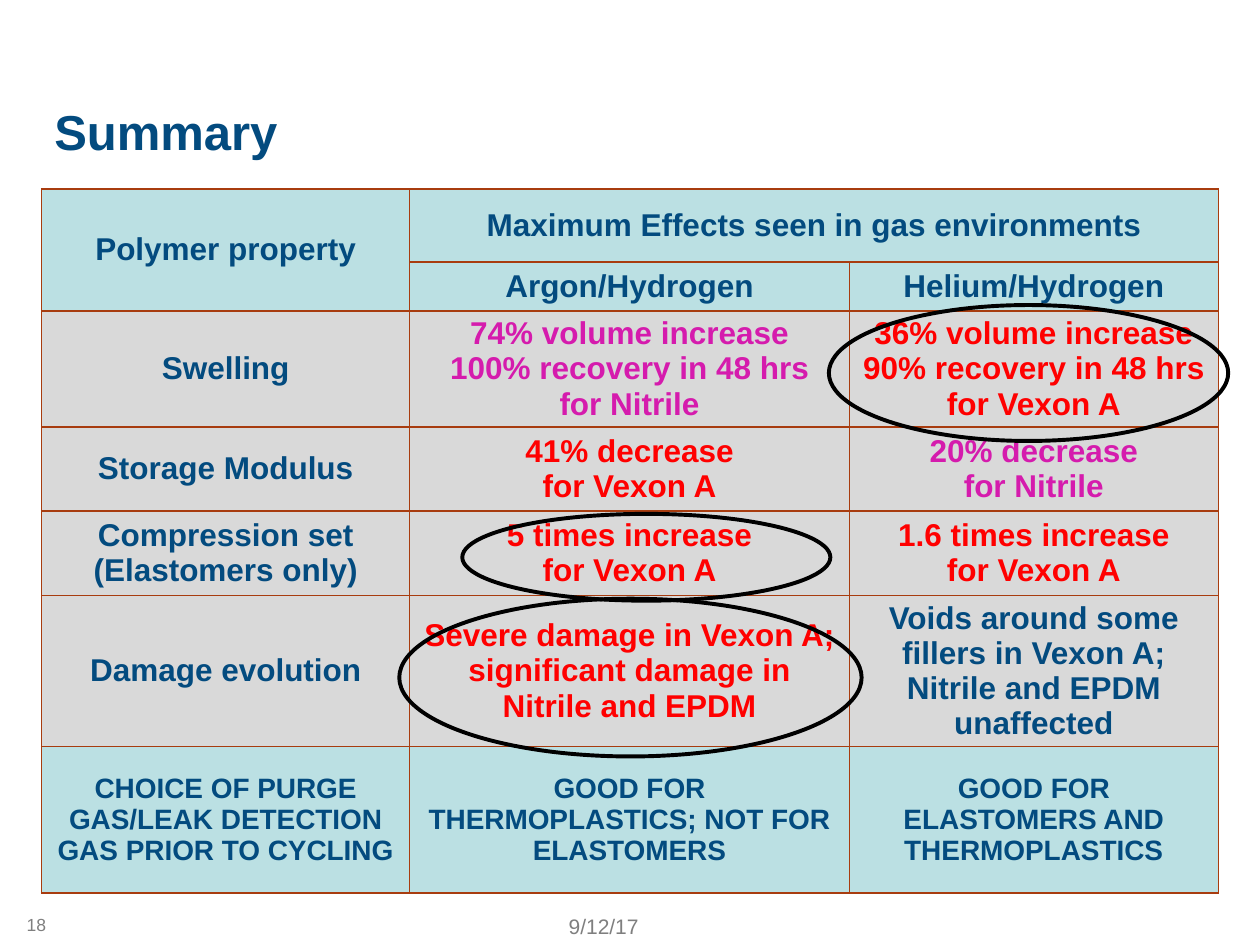
from dataclasses import dataclass

from lxml import etree
from pptx import Presentation
from pptx import util as u
from pptx.dml.color import RGBColor
from pptx.enum import shapes, text
from pptx.oxml import ns


@dataclass(frozen=True)
class Theme:
    font: str = "Arial"
    navy: str = "034B7F"
    magenta: str = "D51BAD"
    red: str = "FF0000"
    black: str = "000000"
    grey: str = "7F7F7F"
    header_fill: str = "BBE0E3"
    body_fill: str = "D9D9D9"
    border: str = "A83C0F"
    title_size: int = 28
    cell_size: int = 18
    verdict_size: int = 16
    date_size: int = 12
    number_size: int = 10


THEME = Theme()

# Each cell is (wording, colour); "\n" starts a paragraph, "\v" breaks a line.
HEADER = [
    [("Polymer property", THEME.navy),
     ("Maximum Effects seen in gas environments", THEME.navy), ("", THEME.navy)],
    [("", THEME.navy), ("Argon/Hydrogen", THEME.navy), ("Helium/Hydrogen", THEME.navy)],
]
FINDINGS = [
    [("Swelling", THEME.navy),
     ("74% volume increase\n100% recovery in 48 hrs\nfor Nitrile", THEME.magenta),
     ("36% volume increase 90% recovery in 48 hrs\nfor Vexon A", THEME.red)],
    [("Storage Modulus", THEME.navy),
     ("41% decrease\nfor Vexon A", THEME.red),
     ("20% decrease\nfor Nitrile", THEME.magenta)],
    [("Compression set\v(Elastomers only)", THEME.navy),
     ("5 times increase\vfor Vexon A", THEME.red),
     ("1.6 times increase\nfor Vexon A", THEME.red)],
    [("Damage evolution", THEME.navy),
     ("Severe damage in Vexon A; significant damage in\vNitrile and EPDM", THEME.red),
     ("Voids around some fillers in Vexon A;\nNitrile and EPDM unaffected", THEME.navy)],
]
VERDICT = [
    ("CHOICE OF PURGE GAS/LEAK DETECTION GAS PRIOR TO CYCLING", THEME.navy),
    ("GOOD FOR THERMOPLASTICS; NOT FOR ELASTOMERS", THEME.navy),
    ("GOOD FOR ELASTOMERS AND THERMOPLASTICS", THEME.navy),
]
COLUMN_WIDTHS = [7.42, 8.86, 7.44]
ROW_HEIGHTS = [1.47, 0.99, 2.13, 1.7, 1.7, 2.62, 2.95]
HIGHLIGHTS = [
    (16.71, 6.15, 8.05, 2.74),
    (8.05, 12.07, 9.32, 3.18),
    (9.32, 10.36, 7.42, 1.75),
]


class SlideBuilder:
    def __init__(self, deck, theme):
        self.theme = theme
        self.slide = deck.slides.add_slide(deck.slide_layouts[5])

    def set_text(self, frame, wording, size, color, bold=False, align=text.PP_ALIGN.CENTER):
        frame.text = wording
        frame.word_wrap = True
        for para in frame.paragraphs:
            para.alignment = align
            para.font.name = self.theme.font
            para.font.size = u.Pt(size)
            para.font.bold = bold
            para.font.color.rgb = RGBColor.from_string(color)

    def title(self, wording, left, top, width, height):
        box = self.slide.shapes.title
        box.left, box.top, box.width, box.height = map(u.Cm, (left, top, width, height))
        frame = box.text_frame
        self.set_text(frame, wording, self.theme.title_size, self.theme.navy,
                      bold=True, align=text.PP_ALIGN.LEFT)
        frame.auto_size = text.MSO_AUTO_SIZE.NONE
        frame.vertical_anchor = text.MSO_ANCHOR.TOP
        frame.margin_top = u.Cm(0.25)

    def label(self, wording, size, left, top, width, height):
        box = self.slide.shapes.add_textbox(*map(u.Cm, (left, top, width, height)))
        self.set_text(box.text_frame, wording, size, self.theme.grey)
        box.text_frame.vertical_anchor = text.MSO_ANCHOR.MIDDLE

    def highlight(self, left, top, width, height):
        ring = self.slide.shapes.add_shape(
            shapes.MSO_SHAPE.OVAL, *map(u.Cm, (left, top, width, height)))
        ring.shadow.inherit = False
        ring.fill.background()
        ring.line.color.rgb = RGBColor.from_string(self.theme.black)
        ring.line.width = u.Pt(2.25)

    def border(self, cell):
        properties = cell._tc.get_or_add_tcPr()
        for side in ("lnL", "lnR", "lnT", "lnB"):
            line = etree.SubElement(properties, ns.qn(f"a:{side}"), w=str(u.Pt(1)))
            fill = etree.SubElement(line, ns.qn("a:solidFill"))
            etree.SubElement(fill, ns.qn("a:srgbClr"), val=self.theme.border)

    def cell(self, cell, wording, color, fill, size):
        self.border(cell)
        cell.fill.solid()
        cell.fill.fore_color.rgb = RGBColor.from_string(fill)
        cell.margin_left = cell.margin_right = u.Cm(0.18)
        cell.margin_top = cell.margin_bottom = u.Cm(0.1)
        cell.vertical_anchor = text.MSO_ANCHOR.MIDDLE
        self.set_text(cell.text_frame, wording, size, color, bold=True)

    def table(self, rows, left, top, widths, heights):
        """Draw rows of (cells, fill, type size)."""
        grid = self.slide.shapes.add_table(
            len(rows), len(widths),
            *map(u.Cm, (left, top, sum(widths), sum(heights)))).table
        grid.first_row = grid.horz_banding = False
        for column, width in zip(grid.columns, widths):
            column.width = u.Cm(width)
        for row, height, (cells, fill, size) in zip(grid.rows, heights, rows):
            row.height = u.Cm(height)
            for cell, (wording, color) in zip(row.cells, cells):
                self.cell(cell, wording, color, fill, size)
        return grid


def main():
    deck = Presentation()
    deck.slide_width, deck.slide_height = u.Cm(25.4), u.Cm(19.05)
    page = SlideBuilder(deck, THEME)

    page.title("Summary", 0.84, 1.8, 23.7, 2.18)

    rows = [(cells, THEME.header_fill, THEME.cell_size) for cells in HEADER]
    rows += [(cells, THEME.body_fill, THEME.cell_size) for cells in FINDINGS]
    rows.append((VERDICT, THEME.header_fill, THEME.verdict_size))
    grid = page.table(rows, 0.84, 3.81, COLUMN_WIDTHS, ROW_HEIGHTS)
    grid.cell(0, 0).merge(grid.cell(1, 0))
    grid.cell(0, 1).merge(grid.cell(0, 2))

    for place in HIGHLIGHTS:
        page.highlight(*place)

    page.label("9/12/17", THEME.date_size, 9.53, 18.36, 5.28, 0.64)
    page.label("18", THEME.number_size, 0, 18.31, 1.47, 0.64)
    deck.save("out.pptx")


if __name__ == "__main__":
    main()
